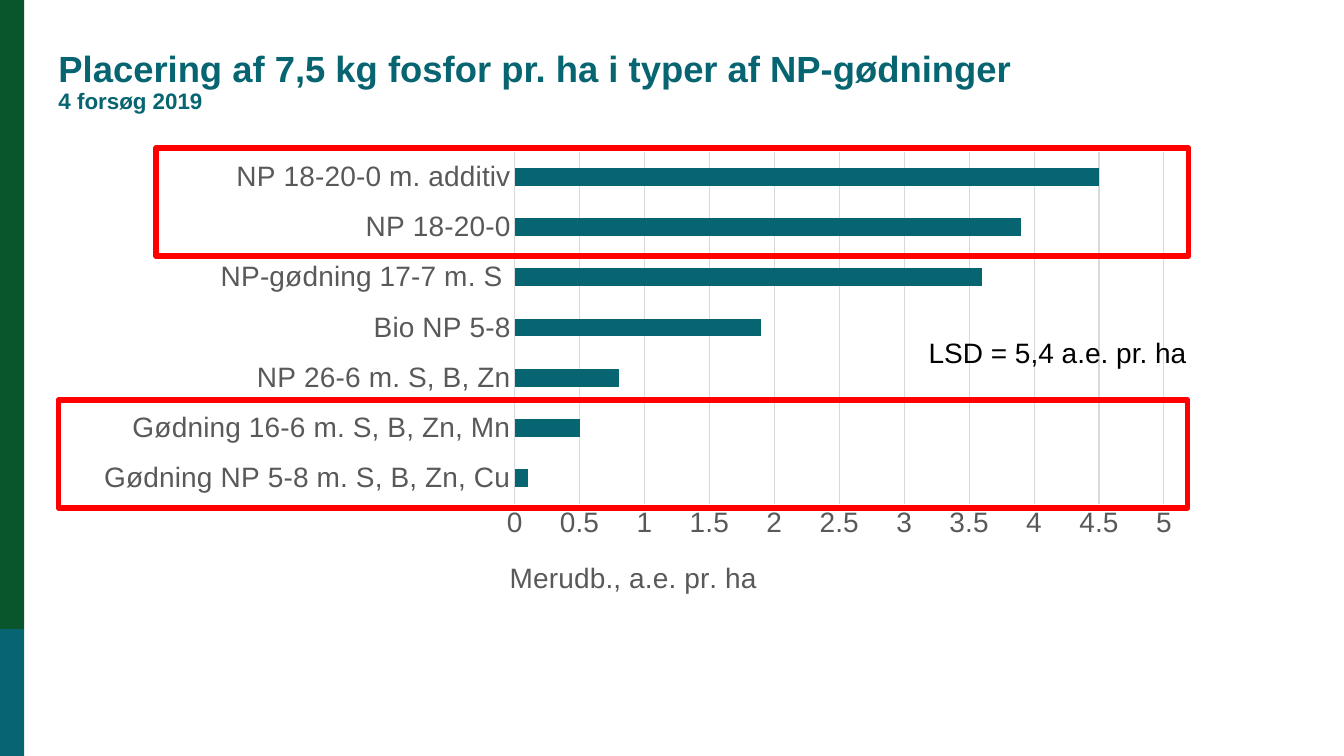
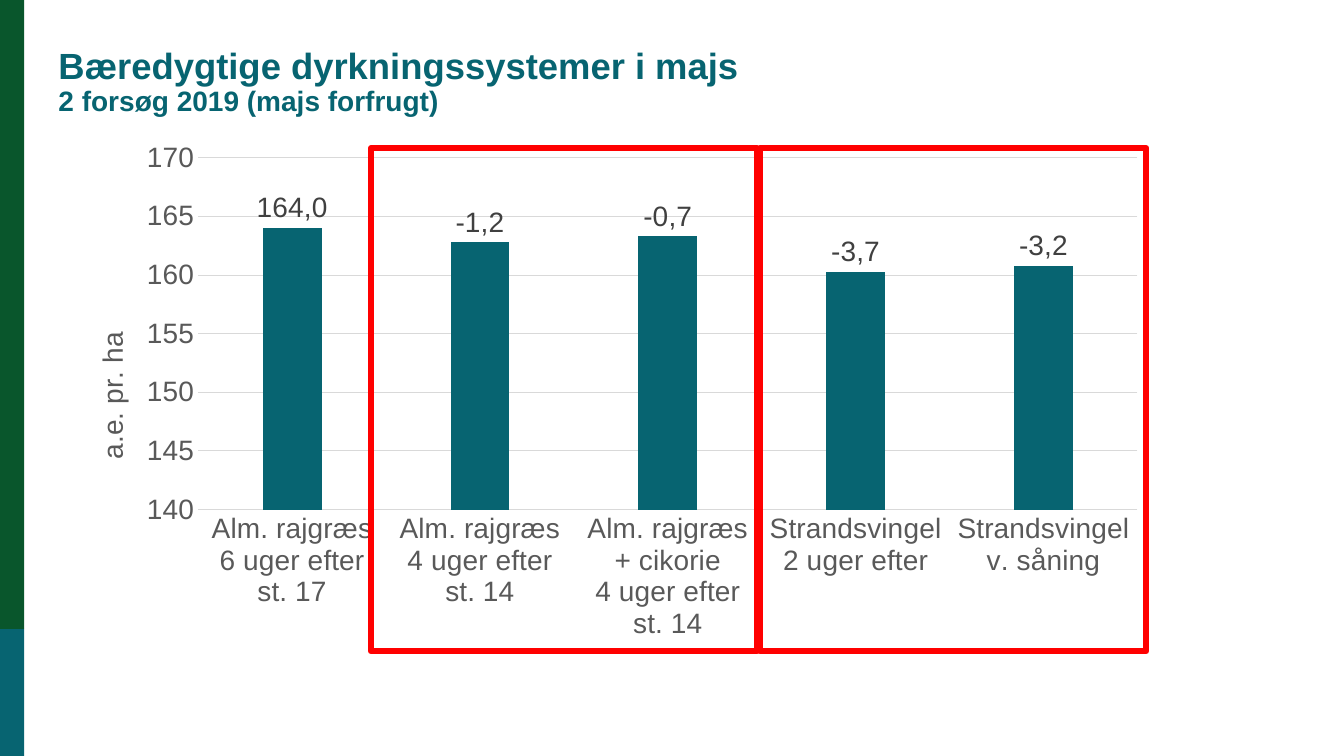
from pptx import Presentation
from pptx.chart.data import CategoryChartData
from pptx.dml.color import RGBColor
from pptx.enum.chart import XL_CHART_TYPE, XL_LABEL_POSITION, XL_TICK_MARK
from pptx.enum.shapes import MSO_SHAPE
from pptx.enum.text import MSO_ANCHOR, MSO_AUTO_SIZE, PP_ALIGN
from pptx.oxml import parse_xml
from pptx.oxml.ns import nsdecls, qn
from pptx.util import Inches, Pt

COLORS = {
    "teal": "076471",
    "green": "09562C",
    "red": "FF0000",
    "axis": "595959",
    "grid": "D9D9D9",
    "label": "404040",
    "black": "000000",
}
RGB = {name: RGBColor.from_string(value) for name, value in COLORS.items()}
FONT = "Arial"

SLIDES = [
    {
        "title": [("Placering af 7,5 kg fosfor pr. ha i typer af NP-gødninger", 26),
                  ("4 forsøg 2019", 16)],
        "type": XL_CHART_TYPE.BAR_CLUSTERED,
        "box": (0.58, 1.5, 11.2, 4.66),
        "plot": {"x": 0.404, "y": 0, "w": 0.575, "h": 0.75},
        "gap": 182, "overlap": 0,
        "scale": (0, 5, 0.5),
        "axis_title": ("Merudb., a.e. pr. ha", {"x": 0.395, "y": 0.86}),
        "data": [("Gødning NP 5-8 m. S, B, Zn, Cu", 0.1),
                 ("Gødning 16-6 m. S, B, Zn, Mn", 0.5),
                 ("NP 26-6 m. S, B, Zn", 0.8),
                 ("Bio NP 5-8", 1.9),
                 ("NP-gødning 17-7 m. S ", 3.6),
                 ("NP 18-20-0", 3.9),
                 ("NP 18-20-0 m. additiv", 4.5)],
        "labels": [],
        "note": ("LSD = 5,4 a.e. pr. ha", (9.21, 3.33, 2.57, 0.34)),
        "frames": [(1.55, 1.47, 10.24, 1.07), (0.58, 3.97, 11.2, 1.07)],
        "frame_width": 4,
    },
    {
        "title": [("Bæredygtige dyrkningssystemer i majs", 26),
                  ("2 forsøg 2019 (majs forfrugt)", 20)],
        "type": XL_CHART_TYPE.COLUMN_CLUSTERED,
        "box": (0.58, 1.32, 10.92, 5.14),
        "plot": {"x": 0.127, "y": 0.048, "w": 0.853, "h": 0.679},
        "gap": 219, "overlap": -27,
        "scale": (140, 170, 5),
        "axis_title": ("a.e. pr. ha", {"x": 0.028, "y": 0.374}),
        "data": [("Alm. rajgræs\n6 uger efter\nst. 17", 164),
                 ("Alm. rajgræs\n4 uger efter\nst. 14", 162.8),
                 ("Alm. rajgræs + cikorie\n4 uger efter\nst. 14", 163.3),
                 ("Strandsvingel\n2 uger efter", 160.3),
                 ("Strandsvingel\nv. såning", 160.8)],
        "labels": ["164,0", "-1,2", "-0,7", "-3,7", "-3,2"],
        "note": None,
        "frames": [(3.68, 1.47, 3.83, 4.99), (7.54, 1.47, 3.83, 4.99)],
        "frame_width": 4.5,
    },
]


def set_font(font, size, color, bold=False):
    font.name = FONT
    font.size = Pt(size)
    font.bold = bold
    font.color.rgb = RGB[color]


def set_layout(parent, index, fractions, target=""):
    """Place a chart part at fractions of the chart's width and height."""
    for old in parent.findall(qn("c:layout")):
        parent.remove(old)
    modes = "".join(f'<c:{key}Mode val="edge"/>' for key in "xy")
    sizes = "".join(f'<c:{key} val="{value}"/>' for key, value in fractions.items())
    parent.insert(index, parse_xml(
        f'<c:layout {nsdecls("c")}><c:manualLayout>{target}{modes}{sizes}'
        "</c:manualLayout></c:layout>"))


presentation = Presentation()
presentation.slide_width = Inches(13.33)
presentation.slide_height = Inches(7.5)
title_only = presentation.slide_layouts[5]

for number, content in enumerate(SLIDES):
    slide = presentation.slides.add_slide(title_only)

    # Side bands, drawn once and moved to the shared layout
    if number == 0:
        for color, top, height in [("teal", 6.24, 1.26), ("green", 0, 6.24)]:
            band = slide.shapes.add_shape(
                MSO_SHAPE.RECTANGLE, 0, Inches(top), Inches(0.24), Inches(height))
            band.shadow.inherit = False
            band.fill.solid()
            band.fill.fore_color.rgb = RGB[color]
            band.line.fill.background()
            title_only.shapes.element.append(band.element)

    # Title with a smaller second line
    title = slide.shapes.title
    title.left, title.top = Inches(0.58), Inches(0.43)
    title.width, title.height = Inches(10.26), Inches(0.78)
    text_frame = title.text_frame
    text_frame.margin_left = text_frame.margin_right = 0
    text_frame.margin_top = text_frame.margin_bottom = 0
    text_frame.vertical_anchor = MSO_ANCHOR.MIDDLE
    text_frame.auto_size = MSO_AUTO_SIZE.NONE
    text_frame.text = "\n".join(text for text, size in content["title"])
    for paragraph, (text, size) in zip(text_frame.paragraphs, content["title"]):
        paragraph.alignment = PP_ALIGN.LEFT
        paragraph.line_spacing = 0.9
        set_font(paragraph.runs[0].font, size, "teal", bold=True)

    # Chart
    chart_data = CategoryChartData()
    chart_data.categories = [category for category, value in content["data"]]
    chart_data.add_series("Series 1", [value for category, value in content["data"]])
    chart = slide.shapes.add_chart(
        content["type"], *map(Inches, content["box"]), chart_data).chart
    chart.has_title = False
    chart.has_legend = False
    set_font(chart.font, 20, "black")
    set_layout(chart.element.find(".//" + qn("c:plotArea")), 0, content["plot"],
               '<c:layoutTarget val="inner"/>')

    plot = chart.plots[0]
    plot.vary_by_categories = False
    plot.gap_width = content["gap"]
    plot.overlap = content["overlap"]
    series = plot.series[0]
    series.format.fill.solid()
    series.format.fill.fore_color.rgb = RGB["teal"]

    # Axes
    category_axis, value_axis = chart.category_axis, chart.value_axis
    for axis in (category_axis, value_axis):
        axis.major_tick_mark = axis.minor_tick_mark = XL_TICK_MARK.NONE
        set_font(axis.tick_labels.font, 20, "axis")
    value_axis.has_major_gridlines = True
    for line in (category_axis.format.line, value_axis.major_gridlines.format.line):
        line.color.rgb = RGB["grid"]
        line.width = Pt(0.75)
    value_axis.format.line.fill.background()
    value_axis.minimum_scale, value_axis.maximum_scale, value_axis.major_unit = content["scale"]

    axis_text, axis_place = content["axis_title"]
    axis_title = value_axis.axis_title
    axis_title.text_frame.text = axis_text
    set_font(axis_title.text_frame.paragraphs[0].runs[0].font, 20, "axis")
    set_layout(axis_title.element, 1, axis_place)

    # Data labels
    for index, label in enumerate(content["labels"]):
        data_label = series.points[index].data_label
        data_label.text_frame.text = label
        set_font(data_label.text_frame.paragraphs[0].runs[0].font, 20, "label")
        data_label.position = XL_LABEL_POSITION.OUTSIDE_END

    # Note beside the bars
    if content["note"]:
        note_text, note_box = content["note"]
        note = slide.shapes.add_textbox(*map(Inches, note_box))
        text_frame = note.text_frame
        text_frame.margin_left = text_frame.margin_right = 0
        text_frame.margin_top = text_frame.margin_bottom = 0
        text_frame.word_wrap = False
        text_frame.auto_size = MSO_AUTO_SIZE.SHAPE_TO_FIT_TEXT
        text_frame.text = note_text
        set_font(text_frame.paragraphs[0].runs[0].font, 20, "black")

    # Highlight frames
    for frame_box in content["frames"]:
        frame = slide.shapes.add_shape(MSO_SHAPE.RECTANGLE, *map(Inches, frame_box))
        frame.shadow.inherit = False
        frame.fill.background()
        frame.line.color.rgb = RGB["red"]
        frame.line.width = Pt(content["frame_width"])

presentation.save("out.pptx")
